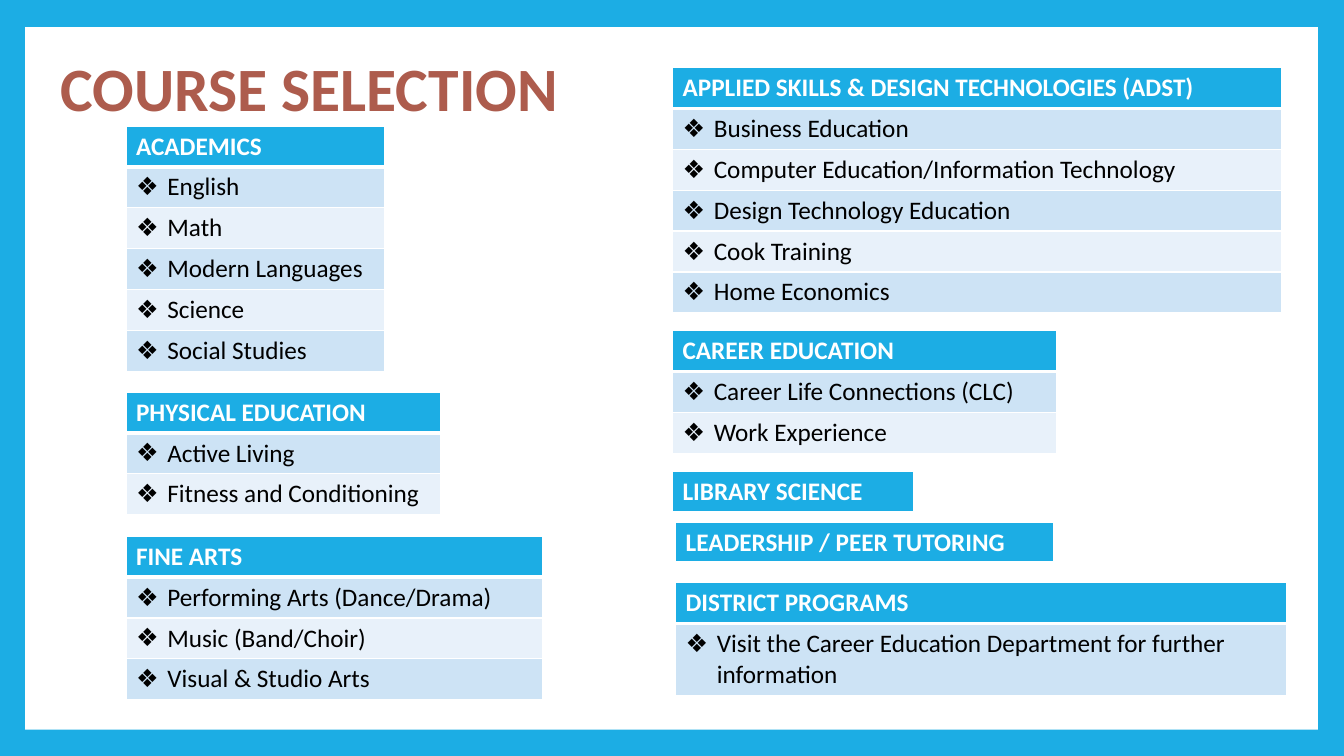
from dataclasses import dataclass

from pptx import Presentation
from pptx.dml.color import RGBColor
from pptx.enum.shapes import MSO_SHAPE as Shape
from pptx.enum.text import MSO_ANCHOR as Anchor, MSO_AUTO_SIZE as AutoSize, PP_ALIGN as Align
from pptx.oxml.ns import qn
from pptx.slide import Slide
from pptx.table import _Cell as Cell
from pptx.text.text import _Paragraph as Paragraph
from pptx.util import Inches, Pt
from lxml.etree import SubElement

COLORS = {
    "blue": "1CADE4",
    "white": "FFFFFF",
    "title": "AD5C4D",
    "text": "000000",
    "odd_row": "CDE3F5",
    "even_row": "E8F1FA",
}
FONT = "Calibri"
ROW_HEIGHT = Inches(0.81) // 2
TWO_LINE_HEIGHT = Inches(0.7)
BULLET_INDENT = Inches(0.31)
THIN, THICK = Pt(1), Pt(3)


@dataclass
class CourseGroup:
    heading: str
    left: float
    top: float
    width: float
    courses: tuple[str, ...] = ()
    course_height: int = ROW_HEIGHT


COURSE_GROUPS = [
    CourseGroup("ACADEMICS", 1.25, 1.25, 2.56,
                ("English", "Math", "Modern Languages", "Science", "Social Studies")),
    CourseGroup("PHYSICAL EDUCATION", 1.25, 3.89, 3.12,
                ("Active Living", "Fitness and Conditioning")),
    CourseGroup("APPLIED SKILLS & DESIGN TECHNOLOGIES (ADST)", 6.67, 0.67, 6.04,
                ("Business Education", "Computer Education/Information Technology",
                 "Design Technology Education", "Cook Training", "Home Economics")),
    CourseGroup("FINE ARTS", 1.25, 5.32, 4.13,
                ("Performing Arts (Dance/Drama)", "Music (Band/Choir)", "Visual & Studio Arts")),
    CourseGroup("CAREER EDUCATION", 6.67, 3.28, 3.81,
                ("Career Life Connections (CLC)", "Work Experience")),
    CourseGroup("LIBRARY SCIENCE", 6.67, 4.68, 2.39),
    CourseGroup("LEADERSHIP / PEER TUTORING", 6.7, 5.18, 3.75),
    CourseGroup("DISTRICT PROGRAMS", 6.7, 5.78, 6.06,
                ("Visit the Career Education Department for further information",),
                TWO_LINE_HEIGHT),
]


def color(name: str) -> RGBColor:
    return RGBColor.from_string(COLORS[name])


def add_run(paragraph: Paragraph, text: str, size: int, color_name: str, bold: bool) -> None:
    run = paragraph.add_run()
    run.text = text
    run.font.name = FONT
    run.font.size = Pt(size)
    run.font.bold = bold
    run.font.color.rgb = color(color_name)


def add_bullet(paragraph: Paragraph) -> None:
    properties = paragraph._p.get_or_add_pPr()
    properties.set("marL", str(BULLET_INDENT))
    properties.set("indent", str(-BULLET_INDENT))
    SubElement(properties, qn("a:buFont"), typeface=FONT)
    SubElement(properties, qn("a:buChar"), char="❖")


def add_borders(cell: Cell, top: int, bottom: int) -> None:
    """Draw white cell borders; must run before the cell is filled."""
    properties = cell._tc.get_or_add_tcPr()
    for side, width in (("L", THIN), ("R", THIN), ("T", top), ("B", bottom)):
        line = SubElement(properties, qn(f"a:ln{side}"), w=str(width))
        fill = SubElement(line, qn("a:solidFill"))
        SubElement(fill, qn("a:srgbClr"), val=COLORS["white"])


def fill_cell(cell: Cell, fill_name: str) -> None:
    cell.fill.solid()
    cell.fill.fore_color.rgb = color(fill_name)


def add_course_group(slide: Slide, group: CourseGroup) -> None:
    row_count = 1 + len(group.courses)
    height = ROW_HEIGHT + len(group.courses) * group.course_height
    table = slide.shapes.add_table(row_count, 1, Inches(group.left), Inches(group.top),
                                   Inches(group.width), height).table
    table.rows[0].height = ROW_HEIGHT
    heading = table.cell(0, 0)
    add_borders(heading, THIN, THICK)
    fill_cell(heading, "blue")
    add_run(heading.text_frame.paragraphs[0], group.heading, 18, "white", True)

    for row, course in enumerate(group.courses, start=1):
        table.rows[row].height = group.course_height
        cell = table.cell(row, 0)
        add_borders(cell, THICK if row == 1 else THIN, THIN)
        fill_cell(cell, "odd_row" if row % 2 else "even_row")
        paragraph = cell.text_frame.paragraphs[0]
        add_bullet(paragraph)
        add_run(paragraph, course, 18, "text", False)


def add_title(slide: Slide, text: str) -> None:
    title = slide.shapes.title
    title.left, title.top = Inches(0.5), Inches(0.17)
    title.width, title.height = Inches(10.8), Inches(1.48)
    frame = title.text_frame
    frame.word_wrap = True
    frame.auto_size = AutoSize.NONE
    frame.vertical_anchor = Anchor.MIDDLE
    paragraph = frame.paragraphs[0]
    paragraph.alignment = Align.LEFT
    paragraph.line_spacing = 0.9
    add_run(paragraph, text, 44, "title", True)


def add_white_panel(slide: Slide) -> None:
    """Place the white panel behind the title, leaving a blue frame."""
    panel = slide.shapes.add_shape(Shape.RECTANGLE, Inches(0.25), Inches(0.27),
                                   Inches(12.82), Inches(6.97))
    panel.shadow.inherit = False
    panel.fill.solid()
    panel.fill.fore_color.rgb = color("white")
    panel.line.fill.background()
    slide.shapes.title.element.addprevious(panel.element)


def main() -> None:
    presentation = Presentation()
    presentation.slide_width = Inches(13.33)
    presentation.slide_height = Inches(7.5)
    slide = presentation.slides.add_slide(presentation.slide_layouts.get_by_name("Title Only"))
    slide.background.fill.solid()
    slide.background.fill.fore_color.rgb = color("blue")
    add_white_panel(slide)
    add_title(slide, "COURSE SELECTION")
    for group in COURSE_GROUPS:
        add_course_group(slide, group)
    presentation.save("out.pptx")


if __name__ == "__main__":
    main()
